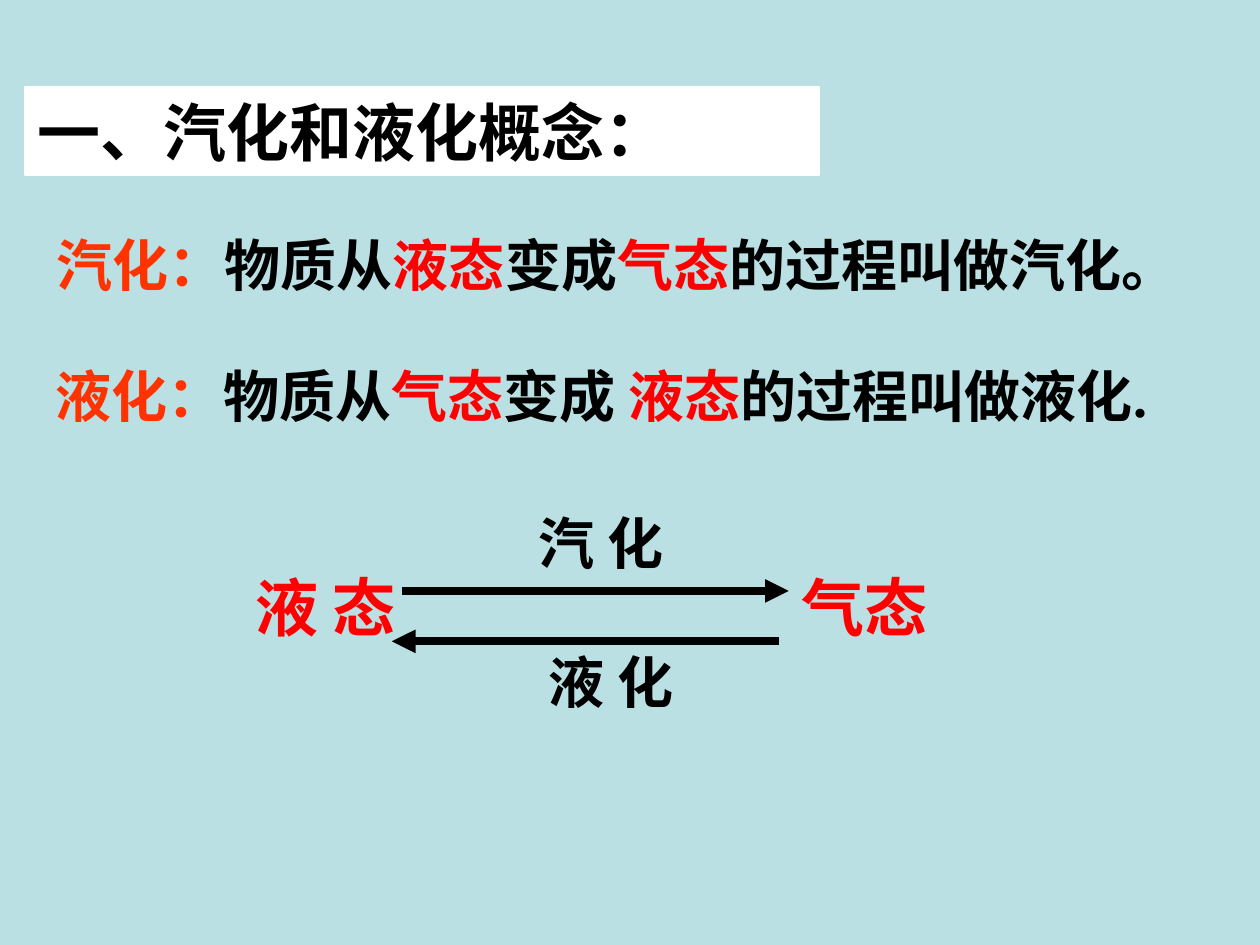
"""Builds a slide that defines vaporization and liquefaction."""
import pptx
import pptx.dml.color
import pptx.enum.shapes
import pptx.enum.text
import pptx.oxml.ns
import pptx.util
from lxml import etree

Inches = pptx.util.Inches
Pt = pptx.util.Pt
RGBColor = pptx.dml.color.RGBColor
ALIGN = pptx.enum.text.PP_ALIGN

SKY = RGBColor(0xBB, 0xE0, 0xE3)
WHITE = RGBColor(0xFF, 0xFF, 0xFF)
BLACK = RGBColor(0x00, 0x00, 0x00)
RED = RGBColor(0xFF, 0x00, 0x00)
ORANGE = RGBColor(0xFF, 0x33, 0x00)
SERIF = "Times New Roman"
SANS = "Arial"
CJK = "Noto Sans CJK SC"


class Lesson:
    def __init__(self, deck):
        self.page = deck.slides.add_slide(deck.slide_layouts[6])
        self.page.background.fill.solid()
        self.page.background.fill.fore_color.rgb = SKY

    def fill_text(self, box, spans, size, font, align=ALIGN.LEFT):
        frame = box.text_frame
        frame.word_wrap = True
        frame.auto_size = pptx.enum.text.MSO_AUTO_SIZE.SHAPE_TO_FIT_TEXT
        para = frame.paragraphs[0]
        para.alignment = align
        para.font.size = Pt(size)
        para.font.name = font
        para.font.bold = True
        for text, color, *own_size in spans:
            span = para.add_run()
            span.text = text
            span.font.color.rgb = color
            if own_size:
                span.font.size = Pt(own_size[0])

    def text(self, left, top, width, height, spans, size, font=SERIF, align=ALIGN.LEFT):
        box = self.page.shapes.add_textbox(
            Inches(left), Inches(top), Inches(width), Inches(height))
        self.fill_text(box, spans, size, font, align)

    def banner(self, left, top, width, height, spans, size):
        box = self.page.shapes.add_shape(
            pptx.enum.shapes.MSO_SHAPE.RECTANGLE,
            Inches(left), Inches(top), Inches(width), Inches(height))
        box.shadow.inherit = False
        box.fill.solid()
        box.fill.fore_color.rgb = WHITE
        box.line.color.rgb = WHITE
        box.line.width = Pt(1)
        self.fill_text(box, spans, size, SANS)

    def arrow(self, start, end, y):
        arrow = self.page.shapes.add_connector(
            pptx.enum.shapes.MSO_CONNECTOR.STRAIGHT,
            Inches(start), Inches(y), Inches(end), Inches(y))
        arrow.line.color.rgb = BLACK
        arrow.line.width = Pt(4.5)
        qn = pptx.oxml.ns.qn
        properties = arrow._element.spPr
        etree.SubElement(properties.find(qn("a:ln")), qn("a:tailEnd"), type="triangle")
        etree.SubElement(properties, qn("a:effectLst"))


def main():
    deck = pptx.Presentation()
    deck.slide_width = Inches(10)
    deck.slide_height = Inches(7.5)
    lesson = Lesson(deck)

    lesson.text(0.35, 1.78, 8.83, 1.17, [
        ("汽化：", ORANGE), ("物质从", BLACK), ("液态", RED), ("变成", BLACK),
        ("气态", RED), ("的过程叫做汽化。", BLACK)], 32)
    lesson.text(0.2, 2.65, 9, 1.37, [
        (" ", ORANGE, 44), ("液化：", ORANGE), ("物质从", BLACK), ("气态", RED),
        ("变成 ", BLACK), ("液态", RED), ("的过程叫做液化.", BLACK)], 32)
    lesson.banner(0.2, 0.69, 6.3, 0.7, [("一、汽化和液化概念：", BLACK)], 36)

    for left, state in ((1.93, "液 态"), (6.26, "气态")):
        lesson.text(left, 4.46, 1.5, 0.7, [(state, RED)], 36)
    lesson.arrow(3.19, 6.26, 4.69)
    lesson.arrow(6.18, 3.11, 5.09)
    for left, top, width, change in ((3.35, 3.99, 2.84, "汽 化"), (3.5, 5.09, 2.7, "液 化")):
        lesson.text(left, top, width, 0.63, [(change, BLACK)], 32, CJK, ALIGN.CENTER)

    deck.save("out.pptx")


if __name__ == "__main__":
    main()
